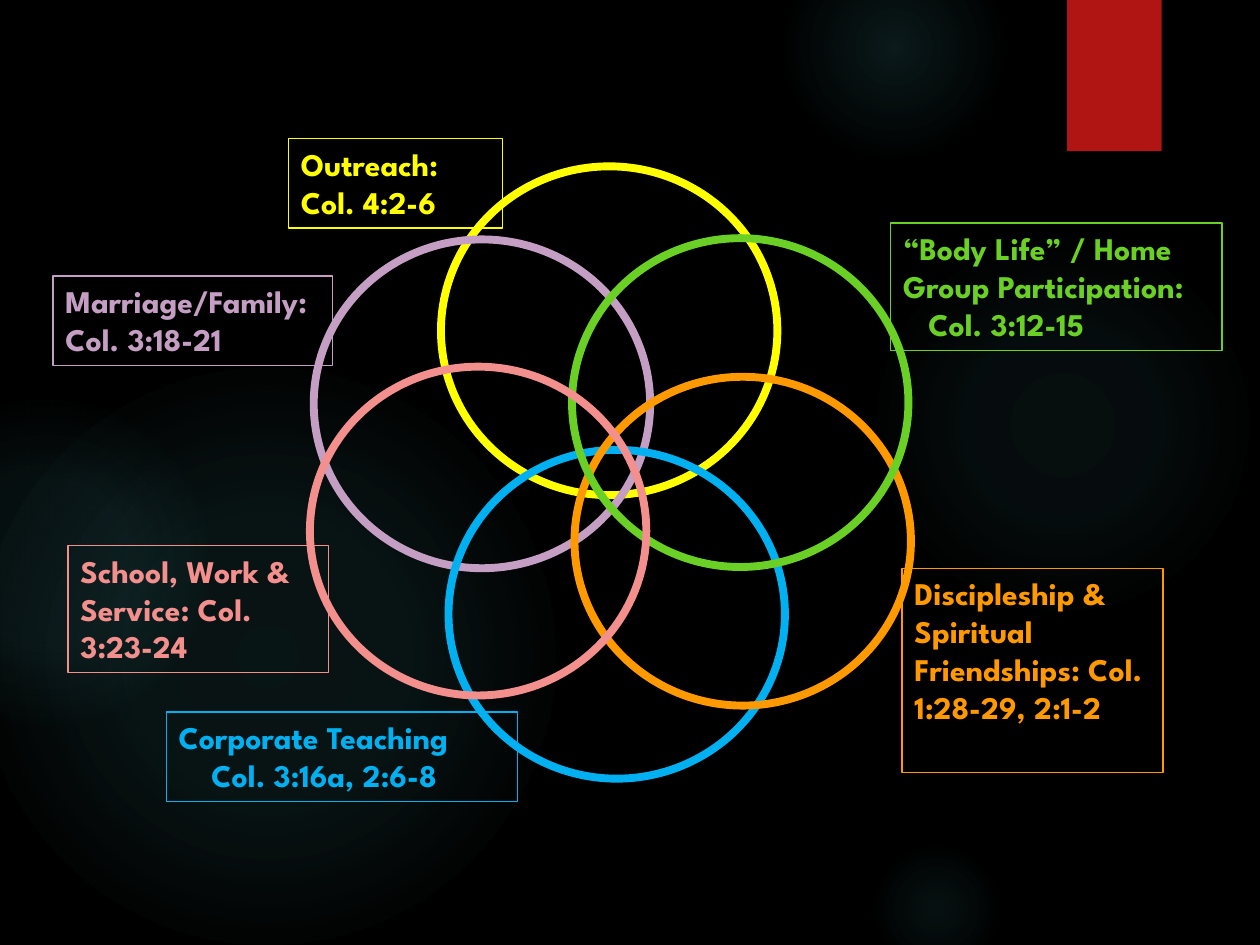
from lxml.etree import SubElement
from pptx import Presentation
from pptx.dml.color import RGBColor
from pptx.enum.shapes import MSO_SHAPE as Preset
from pptx.enum.text import MSO_ANCHOR as Anchor, PP_ALIGN as Align
from pptx.oxml.ns import qn
from pptx.util import Inches, Pt

BLACK = RGBColor(0x00, 0x00, 0x00)
TEAL = RGBColor(0x50, 0xB9, 0xC1)
RED = RGBColor(0xB0, 0x15, 0x13)
YELLOW = RGBColor(0xFF, 0xFF, 0x00)
MAUVE = RGBColor(0xC5, 0x9E, 0xC3)
BLUE = RGBColor(0x00, 0xB0, 0xF0)
ORANGE = RGBColor(0xFF, 0x99, 0x00)
GREEN = RGBColor(0x6B, 0xD0, 0x26)
PINK = RGBColor(0xF3, 0x8F, 0x8D)

COLUMNS, ROWS = 100, 75
RING_WIDTH, RING_HEIGHT = 26.7, 26.1

deck = Presentation()
deck.slide_width, deck.slide_height = Inches(10), Inches(7.5)
column, row = deck.slide_width / COLUMNS, deck.slide_height / ROWS
page = deck.slides.add_slide(deck.slide_layouts[6])
page.background.fill.solid()
page.background.fill.fore_color.rgb = BLACK


def add_shape(preset, left, top, width, height, color=None, weight=0):
    shape = page.shapes.add_shape(preset, round(left * column), round(top * row),
                                  round(width * column), round(height * row))
    shape.shadow.inherit = False
    shape.fill.background()
    if weight:
        shape.line.color.rgb = color
        shape.line.width = Pt(weight)
    else:
        shape.line.fill.background()
    return shape


def fade(shape, stops):
    shape.fill.gradient()
    gradient = shape.fill._fill._gradFill
    for child in list(gradient):
        gradient.remove(child)
    stop_list = SubElement(gradient, qn("a:gsLst"))
    for position, alpha in stops:
        stop = SubElement(stop_list, qn("a:gs"), pos=str(position * 1000))
        color = SubElement(stop, qn("a:srgbClr"), val=str(TEAL))
        SubElement(color, qn("a:alpha"), val=str(alpha * 1000))
    circle = SubElement(gradient, qn("a:path"), path="circle")
    SubElement(circle, qn("a:fillToRect"), l="50000", t="50000", r="50000", b="50000")


glows = [
    (68.9, 18.3, 30.8, 7, 6, 69),
    (62.2, -5, 17.5, 14, 7, 73),
    (68.9, 66.7, 10.8, 9, 5, 66),
    (-1.7, 29.2, 45.8, 11, 10, 75),
    (-9.2, 31.7, 25.8, 8, 8, 72),
]
for left, top, size, center, middle, edge in glows:
    glow = add_shape(Preset.OVAL, left, top, size, size)
    fade(glow, [(0, center), (36, middle), (edge, 0)])

tab = add_shape(Preset.RECTANGLE, 84.7, 0, 7.5, 12)
tab.fill.solid()
tab.fill.fore_color.rgb = RED

rings = [
    (35, 13.2, YELLOW),
    (24.9, 19, MAUVE),
    (35.6, 35.7, BLUE),
    (45.6, 29.9, ORANGE),
    (45.4, 18.9, GREEN),
    (24.6, 29.1, PINK),
]
for left, top, color in rings:
    add_shape(Preset.OVAL, left, top, RING_WIDTH, RING_HEIGHT, color, 4.5)

labels = [
    (22.9, 11, 17, 7.1, YELLOW, ["Outreach: Col. 4:2-6"], 0),
    (70.7, 17.7, 26.3, 10.1, GREEN,
     ["“Body Life” / Home Group Participation:", "Col. 3:12-15"], 2),
    (5.4, 43.3, 20.7, 10.1, PINK, ["School, Work & Service: Col. 3:23-24"], 0),
    (13.2, 56.5, 27.9, 7.1, BLUE, ["Corporate Teaching", "Col. 3:16a, 2:6-8"], 2.6),
    (71.6, 45.1, 20.7, 16.2, ORANGE,
     ["Discipleship & Spiritual Friendships: Col. 1:28-29, 2:1-2"], 0),
    (4.2, 21.9, 22.2, 7.1, MAUVE, ["Marriage/Family: Col. 3:18-21"], 0),
]
for left, top, width, height, color, lines, indent in labels:
    box = add_shape(Preset.RECTANGLE, left, top, width, height, color, 0.75)
    frame = box.text_frame
    frame.word_wrap = True
    frame.vertical_anchor = Anchor.TOP
    for index, line in enumerate(lines):
        para = frame.paragraphs[0] if index == 0 else frame.add_paragraph()
        para.alignment = Align.LEFT
        if index:
            para._p.get_or_add_pPr().set("marL", str(round(indent * column)))
        span = para.add_run()
        span.text = line
        for name, value in {"name": "League Spartan", "size": Pt(18), "bold": True}.items():
            setattr(span.font, name, value)
        span.font.color.rgb = color

deck.save("out.pptx")
